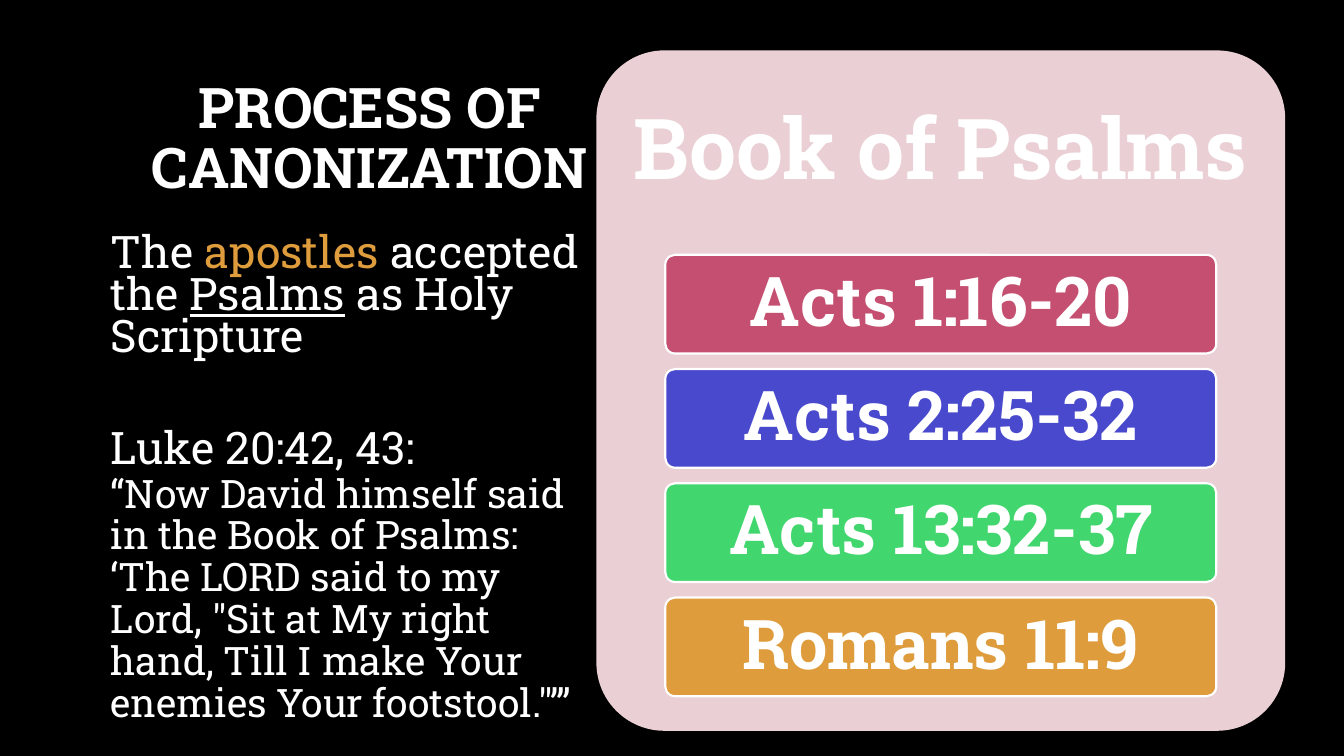
from collections import namedtuple

from pptx import Presentation
from pptx.dml.color import RGBColor
from pptx.enum.shapes import MSO_SHAPE
from pptx.enum.text import MSO_ANCHOR, PP_ALIGN
from pptx.util import Pt

Box = namedtuple("Box", "left top width height")

COLORS = {
    "black": "000000",
    "white": "FFFFFF",
    "pink": "EAD0D5",
    "rose": "C54F71",
    "blue": "4949CD",
    "green": "42D66E",
    "orange": "DE9C3C",
}
FONT = "Roboto Slab"
HEADING = {"alignment": PP_ALIGN.CENTER, "line_spacing": 0.9}
BODY = {"line_spacing": Pt(30), "space_before": Pt(10)}
AFTER_GAP = {**BODY, "space_before": Pt(50)}
VERSES = [
    ("Acts 1:16-20", "rose"),
    ("Acts 2:25-32", "blue"),
    ("Acts 13:32-37", "green"),
    ("Romans 11:9", "orange"),
]


def color(name):
    return RGBColor.from_string(COLORS[name])


def set_all(target, values):
    for name, value in values.items():
        setattr(target, name, value)


def in_points(box):
    return [Pt(length) for length in box]


def set_frame(shape, anchor, side=7.2, end=3.6):
    """Wrap and anchor the text, with side and end margins in points."""
    frame = shape.text_frame
    set_all(frame, {
        "word_wrap": True, "vertical_anchor": anchor,
        "margin_left": Pt(side), "margin_right": Pt(side),
        "margin_top": Pt(end), "margin_bottom": Pt(end),
    })
    return frame


def add_span(para, text, size, tint="white", **values):
    span = para.add_run()
    span.text = text
    set_all(span.font, {"name": FONT, "size": Pt(size), **values})
    span.font.color.rgb = color(tint)


def write_heading(frame, text, size):
    para = frame.paragraphs[0]
    set_all(para, HEADING)
    add_span(para, text, size, bold=True)


def add_rounded(page, box, fill):
    shape = page.shapes.add_shape(MSO_SHAPE.ROUNDED_RECTANGLE, *in_points(box))
    shape.adjustments[0] = 0.1
    shape.shadow.inherit = False
    shape.fill.solid()
    shape.fill.fore_color.rgb = color(fill)
    shape.line.fill.background()
    return shape


def add_title(page, box):
    title = page.shapes.add_textbox(*in_points(box))
    write_heading(set_frame(title, MSO_ANCHOR.MIDDLE), "PROCESS OF CANONIZATION", 40)


def add_body(page, box):
    body = page.shapes.add_textbox(*in_points(box))
    frame = set_frame(body, MSO_ANCHOR.TOP)

    claim = frame.paragraphs[0]
    set_all(claim, BODY)
    add_span(claim, "The ", 32)
    add_span(claim, "apostles", 32, "orange")
    add_span(claim, " accepted the ", 32)
    add_span(claim, "Psalms", 32, underline=True)
    add_span(claim, " as Holy Scripture", 32)

    quote = frame.add_paragraph()
    set_all(quote, AFTER_GAP)
    add_span(quote, "Luke 20:42, 43:", 32)
    quote.add_line_break()
    add_span(quote, "“Now David himself said in the Book of Psalms: "
             "‘The LORD said to my Lord, \"Sit at My right hand, "
             "Till I make Your enemies Your footstool.\"’”", 28)


def add_verse_panel(page, box):
    """Draw the rounded panel with its heading and a column of verse bars."""
    add_rounded(page, box, "pink")
    heading = page.shapes.add_textbox(*in_points(box._replace(height=145.8)))
    write_heading(set_frame(heading, MSO_ANCHOR.MIDDLE, 18, 18), "Book of Psalms", 60)

    inset = box.width * 0.1
    pitch = 81.6
    first = Box(box.left + inset, box.top + 146, box.width - 2 * inset, 70.5)
    for index, (verse, fill) in enumerate(VERSES):
        bar = add_rounded(page, first._replace(top=first.top + index * pitch), fill)
        bar.line.color.rgb = color("white")
        bar.line.width = Pt(1.5)
        write_heading(set_frame(bar, MSO_ANCHOR.MIDDLE, 10, 7.2), verse, 49)


def main():
    deck = Presentation()
    set_all(deck, {"slide_width": Pt(960), "slide_height": Pt(540)})
    page = deck.slides.add_slide(deck.slide_layouts[6])
    page.background.fill.solid()
    page.background.fill.fore_color.rgb = color("black")
    add_title(page, Box(72, 48, 384, 104.5))
    add_body(page, Box(72, 165, 354, 291))
    add_verse_panel(page, Box(426, 36, 492, 486))
    deck.save("out.pptx")


if __name__ == "__main__":
    main()
